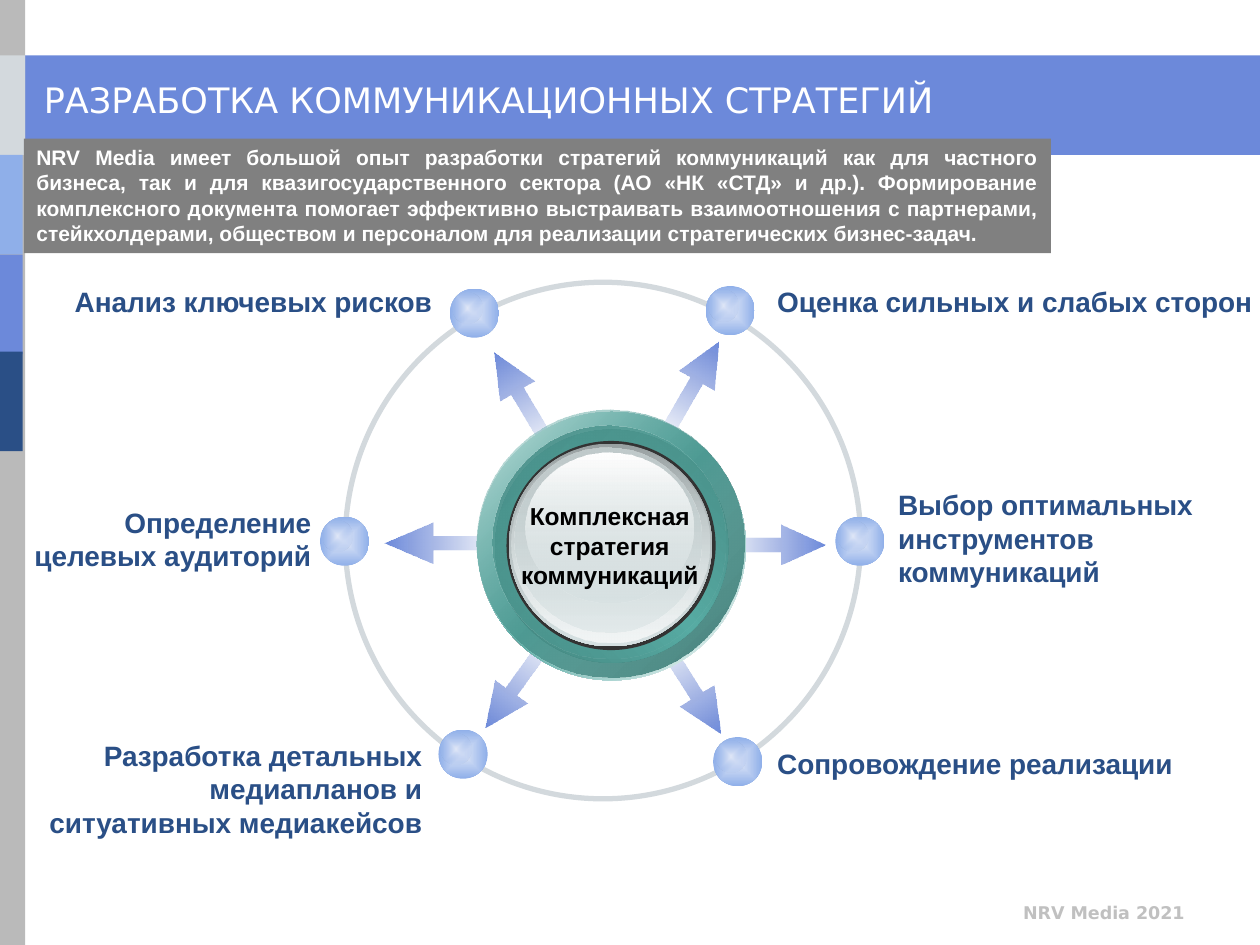
"""Build the slide on developing communication strategies."""
from lxml import etree
from pptx import Presentation
from pptx import util as u
from pptx.dml.color import RGBColor
from pptx.enum import shapes, text
from pptx.oxml.ns import qn

Inches = u.Inches
ALIGN = text.PP_ALIGN
OVAL = shapes.MSO_SHAPE.OVAL
NAVY, BLUE, SKY, SILVER = "2A4F86", "6C89DA", "8FAFE9", "D3D9DD"

BANDS = [
    (0, 0.44, 10, 0.79, BLUE),
    (-0.01, 0, 0.21, 7.5, "BABABA"),
    (0, 0.44, 0.2, 0.79, SILVER),
    (-0.02, 1.23, 0.2, 0.79, SKY),
    (-0.02, 2.02, 0.2, 0.79, BLUE),
    (-0.02, 2.79, 0.2, 0.79, NAVY),
]
ARROWS = [
    (5.05, 2.93, 0.87, 299.6),
    (5.05, 5.29, 0.87, 57.8),
    (3.71, 3.01, 0.87, 239.5),
    (3.67, 5.26, 0.87, 125.6),
    (5.68, 4.16, 0.87, 0),
    (3.05, 4.15, 0.94, 180),
]
NODES = [(3.57, 2.29), (2.54, 4.1), (3.48, 5.79),
         (5.6, 2.27), (6.63, 4.1), (5.66, 5.85)]
HUB_RINGS = [
    (3.79, 3.27, 2.13, 2.13, 45, [(0, "FFFFFF"), (50, "57ABA3"), (100, "FFFFFF")]),
    (3.78, 3.25, 2.13, 2.13, 45, [(0, "57ABA3", 32), (100, "3E7A75")]),
    (3.93, 3.41, 1.85, 1.85, 315, [(0, "43837D"), (50, "57ABA3"), (100, "43837D")]),
    (3.91, 3.38, 1.85, 1.85, 45, [(0, "478C86"), (100, "57ABA3", 0)]),
    (4.02, 3.5, 1.66, 1.66, 0, "333333"),
    (4.04, 3.52, 1.61, 1.61, 90, [(0, "99A1A2"), (100, "D6E1E2")]),
    (4.06, 3.53, 1.57, 1.57, 90, [(0, "D6E1E2", 0), (100, "F2F5F5")]),
    (4.08, 3.55, 1.49, 1.47, 90, [(0, "C1CBCC"), (100, "D6E1E2", 48)]),
    (4.17, 3.59, 1.33, 1.19, 90, [(0, "FFFFFF"), (100, "D6E1E2", 38)]),
]
LABELS = [
    (6.07, 2.21, 4.02, 0.37, ALIGN.LEFT, ["Оценка сильных и слабых сторон"]),
    (0.46, 2.21, 3.07, 0.37, ALIGN.RIGHT, ["Анализ ключевых рисков"]),
    (0.14, 3.96, 2.43, 0.64, ALIGN.RIGHT, ["Определение", "целевых аудиторий"]),
    (6.07, 5.88, 3.38, 0.37, ALIGN.LEFT, ["Сопровождение реализации"]),
    (7.03, 3.82, 2.57, 0.91, ALIGN.LEFT,
     ["Выбор оптимальных", "инструментов", "коммуникаций"]),
    (0.19, 5.81, 3.26, 0.91, ALIGN.RIGHT,
     ["Разработка детальных", "медиапланов и", "ситуативных медиакейсов"]),
]
INTRO = (
    "NRV Media имеет большой опыт разработки стратегий коммуникаций как для "
    "частного бизнеса, так и для квазигосударственного сектора (АО «НК «СТД» "
    "и др.). Формирование комплексного документа помогает эффективно "
    "выстраивать взаимоотношения с партнерами, стейкхолдерами, обществом и "
    "персоналом для реализации стратегических бизнес-задач."
)


def color(value):
    """Return the colour for a hex string."""
    return RGBColor.from_string(value)


def write(holder, lines, size=16, font="Arial", ink=NAVY, bold=True,
          align=ALIGN.LEFT, wrap=True, anchor=text.MSO_ANCHOR.TOP,
          fit=text.MSO_AUTO_SIZE.NONE):
    """Fill a shape with formatted paragraphs."""
    frame = holder.text_frame
    frame.text = "\n".join(lines)
    frame.word_wrap = wrap
    frame.auto_size = fit
    frame.vertical_anchor = anchor
    for paragraph in frame.paragraphs:
        paragraph.alignment = align
        for run in paragraph.runs:
            run.font.size = u.Pt(size)
            run.font.name = font
            run.font.bold = bold
            run.font.color.rgb = color(ink)


def add_label(slide, left, top, width, height, lines, **style):
    """Add a text box with formatted text."""
    box = slide.shapes.add_textbox(*map(Inches, (left, top, width, height)))
    write(box, lines, **style)


def apply_gradient(shape, stops, angle=None):
    """Give a shape a linear gradient, or one from its centre without an angle."""
    shape.fill.solid()
    solid = shape._element.spPr.find(qn("a:solidFill"))
    gradient = etree.Element(qn("a:gradFill"), rotWithShape="1")
    stop_list = etree.SubElement(gradient, qn("a:gsLst"))
    for position, value, *alpha in stops:
        stop = etree.SubElement(stop_list, qn("a:gs"), pos=str(position * 1000))
        shade = etree.SubElement(stop, qn("a:srgbClr"), val=value)
        for percent in alpha:
            etree.SubElement(shade, qn("a:alpha"), val=str(percent * 1000))
    if angle is None:
        center = etree.SubElement(gradient, qn("a:path"), path="shape")
        etree.SubElement(center, qn("a:fillToRect"),
                         dict.fromkeys("ltrb", "50000"))
    else:
        etree.SubElement(gradient, qn("a:lin"), ang=str(angle * 60000), scaled="1")
    solid.getparent().replace(solid, gradient)


def add_figure(parent, kind, left, top, width, height, fill=None, angle=None):
    """Add an unlined shape with a plain fill, a gradient or no fill."""
    figure = parent.shapes.add_shape(kind, *map(Inches, (left, top, width, height)))
    figure.shadow.inherit = False
    figure.line.fill.background()
    if fill is None:
        figure.fill.background()
    elif isinstance(fill, str):
        figure.fill.solid()
        figure.fill.fore_color.rgb = color(fill)
    else:
        apply_gradient(figure, fill, angle)
    return figure


def add_arrow(slide, left, top, length, rotation):
    """Add a block arrow that fades in towards its head."""
    height = 0.32
    arrow = add_figure(slide, shapes.MSO_SHAPE.RIGHT_ARROW, left, top, length, height,
                       [(0, "6782CF", 0), (100, BLUE)], 0)
    arrow.adjustments[0] = 0.352
    arrow.adjustments[1] = 1.21 if length > 0.9 else 1.11
    arrow.rotation = rotation


def add_node(slide, left, top):
    """Add a ball with a highlight as one group."""
    group = slide.shapes.add_group_shape()
    add_figure(group, OVAL, left, top, 0.39, 0.39, [(0, "E1E8F8"), (100, SKY)])
    add_figure(group, OVAL, left + 0.02, top + 0.03, 0.24, 0.25,
               [(0, "E1E8F8"), (100, SKY, 0)])


def add_title(slide, wording):
    """Place the title on top of the header band."""
    title = slide.shapes.title
    title.left, title.top, title.width, title.height = map(
        Inches, (-0.16, 0.48, 8.08, 0.62))
    write(title, [wording], size=20, font="DejaVu Sans", ink="FFFFFF", bold=False,
          align=ALIGN.CENTER, anchor=text.MSO_ANCHOR.MIDDLE)
    slide.shapes._spTree.append(title._element)


def main():
    """Build and save the slide."""
    deck = Presentation()
    deck.slide_width, deck.slide_height = Inches(10), Inches(7.5)
    slide = deck.slides.add_slide(deck.slide_layouts[5])

    for *place, fill in BANDS:
        add_figure(slide, shapes.MSO_SHAPE.RECTANGLE, *place, fill)
    add_label(slide, 6.33, 7.11, 3.17, 0.25, ["NRV Media 2021"], size=10,
              font="DejaVu Sans", ink="C0C0C0", align=ALIGN.RIGHT)
    add_title(slide, "РАЗРАБОТКА КОММУНИКАЦИОННЫХ СТРАТЕГИЙ")

    for arrow in ARROWS:
        add_arrow(slide, *arrow)
    orbit = add_figure(slide, OVAL, 2.74, 2.24, 4.09, 4.1)
    orbit.line.color.rgb = color(SILVER)
    orbit.line.width = u.Pt(3)
    for node in NODES:
        add_node(slide, *node)
    for *place, angle, fill in HUB_RINGS:
        add_figure(slide, OVAL, *place, fill, angle)

    grow = text.MSO_AUTO_SIZE.SHAPE_TO_FIT_TEXT
    add_label(slide, 4.03, 3.93, 1.62, 0.81,
              ["Комплексная", "стратегия", "коммуникаций"], size=14, ink="000000",
              align=ALIGN.CENTER, wrap=False, fit=grow)
    for *place, align, lines in LABELS:
        add_label(slide, *place, lines, align=align, wrap=False, fit=grow)

    intro = add_figure(slide, shapes.MSO_SHAPE.RECTANGLE, 0.19, 1.1, 8.15, 0.91, "808080")
    write(intro, [INTRO], size=12, ink="FFFFFF", align=ALIGN.JUSTIFY, fit=grow)
    deck.save("out.pptx")


if __name__ == "__main__":
    main()
